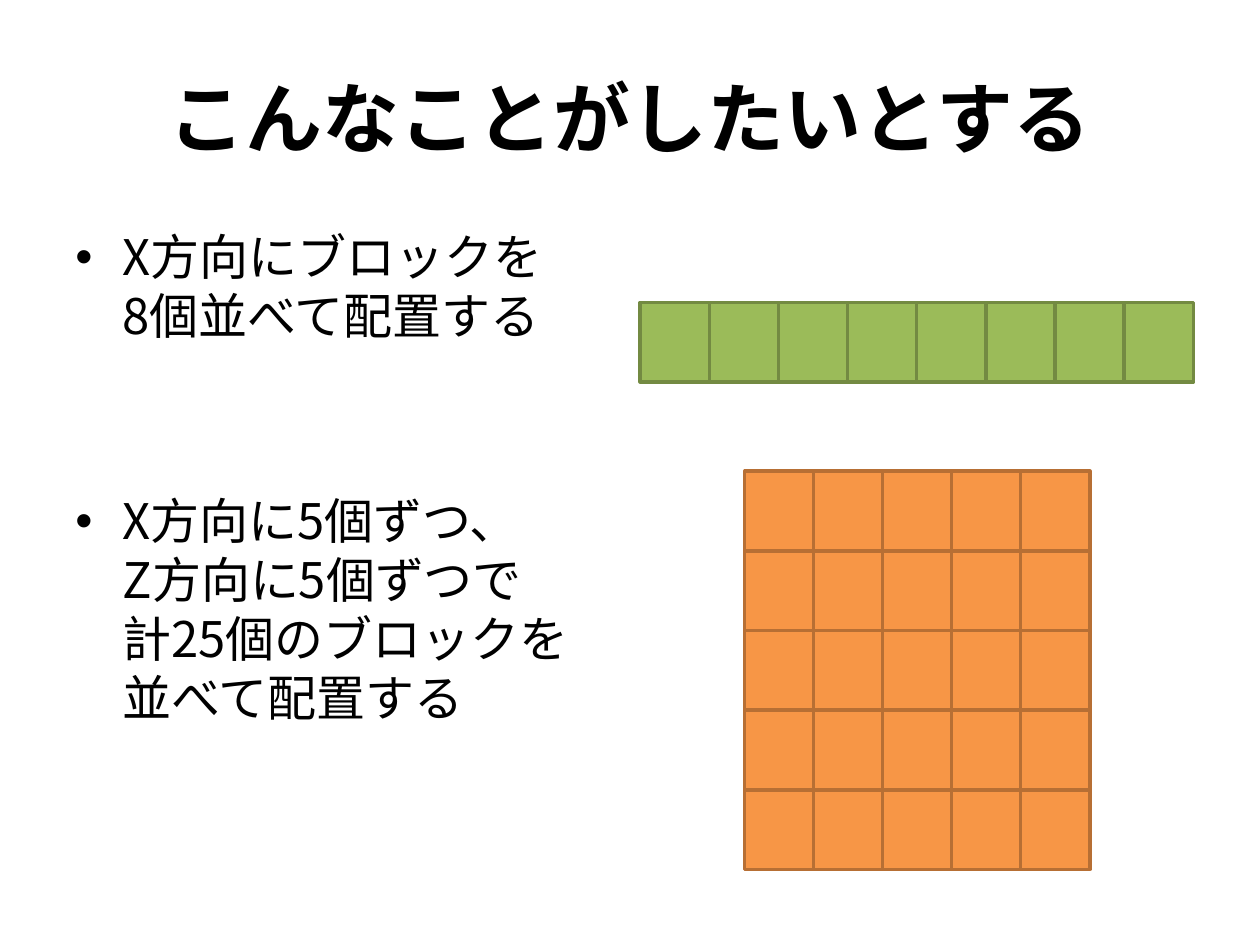
from lxml import etree
from pptx import Presentation
from pptx.dml.color import RGBColor
from pptx.enum import shapes, text
from pptx.oxml import ns
from pptx.util import Pt

COLORS = {
    "ink": "000000",
    "green": "9BBB59",
    "green_edge": "738A42",
    "orange": "F79646",
    "orange_edge": "B76F34",
}


class SlideBuilder:
    font_name = "Noto Sans CJK JP"
    block_size = (39.7, 45.5)
    edge_width = 2
    bullet_indent = 27

    def __init__(self, slide):
        self.slide = slide

    def color(self, name):
        return RGBColor.from_string(COLORS[name])

    def frame(self, box, anchor):
        frame = self.slide.shapes.add_textbox(*map(Pt, box)).text_frame
        settings = {"word_wrap": True, "vertical_anchor": anchor}
        for key, value in settings.items():
            setattr(frame, key, value)
        return frame

    def set_wording(self, paragraph, wording, size, bold=False):
        paragraph.text = wording
        for run in paragraph.runs:
            settings = {"name": self.font_name, "size": Pt(size), "bold": bold}
            for key, value in settings.items():
                setattr(run.font, key, value)
            run.font.color.rgb = self.color("ink")
            east_asian = etree.SubElement(run.font._element, ns.qn("a:ea"))
            east_asian.set("typeface", self.font_name)

    def title(self, wording, box, size):
        heading = self.frame(box, text.MSO_ANCHOR.MIDDLE).paragraphs[0]
        heading.alignment = text.PP_ALIGN.CENTER
        self.set_wording(heading, wording, size, bold=True)

    def bullets(self, items, box, size, leading):
        frame = self.frame(box, text.MSO_ANCHOR.TOP)
        for index, (wording, gap) in enumerate(items):
            item = frame.add_paragraph() if index else frame.paragraphs[0]
            self.set_wording(item, wording, size)
            settings = {"space_before": Pt(gap), "line_spacing": Pt(leading)}
            for key, value in settings.items():
                setattr(item, key, value)
            properties = item._p.get_or_add_pPr()
            properties.set("marL", str(Pt(self.bullet_indent)))
            properties.set("indent", str(-Pt(self.bullet_indent)))
            typeface = etree.SubElement(properties, ns.qn("a:buFont"))
            typeface.set("typeface", "Arial")
            etree.SubElement(properties, ns.qn("a:buChar")).set("char", "•")

    def block(self, left, top, color):
        block = self.slide.shapes.add_shape(
            shapes.MSO_SHAPE.RECTANGLE, *map(Pt, (left, top, *self.block_size))
        )
        block.shadow.inherit = False
        block.fill.solid()
        block.fill.fore_color.rgb = self.color(color)
        block.line.color.rgb = self.color(color + "_edge")
        block.line.width = Pt(self.edge_width)

    def block_grid(self, origin, columns, rows, pitch, color):
        left, top = origin
        for row in range(rows):
            for column in range(columns):
                self.block(left + column * pitch[0], top + row * pitch[1], color)


def main():
    deck = Presentation()
    deck.slide_width, deck.slide_height = Pt(720), Pt(540)
    builder = SlideBuilder(deck.slides.add_slide(deck.slide_layouts[6]))

    builder.title("こんなことがしたいとする", (36, 21.6, 648, 90), 44)
    steps = [
        ("X方向にブロックを\v8個並べて配置する", 3.5),
        ("X方向に5個ずつ、\vZ方向に5個ずつで\v計25個のブロックを\v並べて配置する", 83.5),
    ]
    builder.bullets(steps, (36, 126, 318.2, 356.4), 28, 33.7)
    builder.block_grid((365.8, 172.8), 8, 1, (39.5, 45.5), "green")
    builder.block_grid((425.5, 269.3), 5, 5, (39.4, 45.5), "orange")

    deck.save("out.pptx")


if __name__ == "__main__":
    main()
